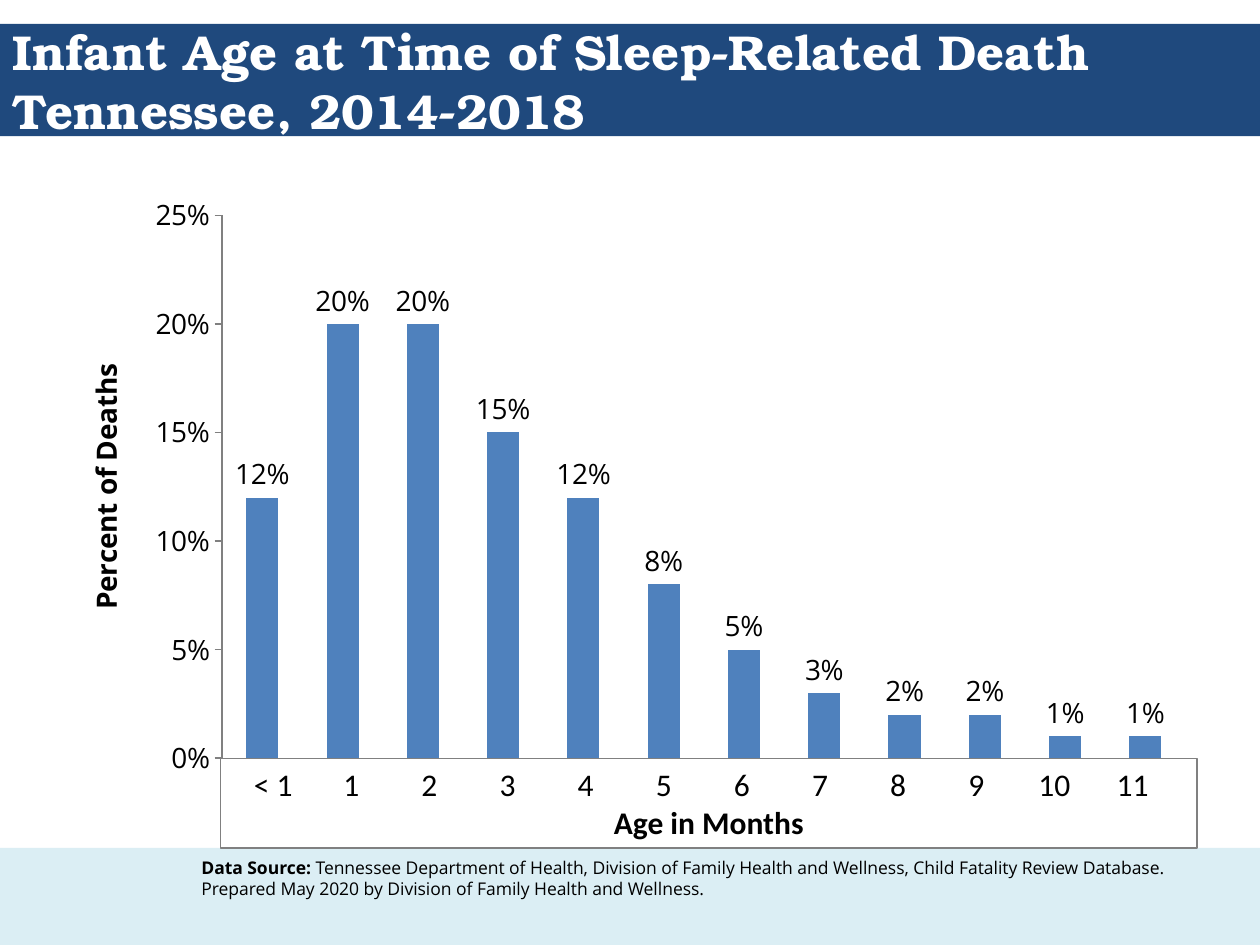
from lxml.etree import SubElement
from pptx import Presentation
from pptx.chart.data import CategoryChartData
from pptx.dml.color import RGBColor
from pptx.enum.chart import XL_CHART_TYPE as ChartType
from pptx.enum.chart import XL_LABEL_POSITION as LabelPosition
from pptx.enum.chart import XL_TICK_MARK as TickMark
from pptx.enum.shapes import MSO_SHAPE as Shape
from pptx.enum.text import MSO_ANCHOR as Anchor
from pptx.enum.text import PP_ALIGN as Align
from pptx.oxml.ns import qn
from pptx.util import Inches, Pt

# Content
TITLE = ["Infant Age at Time of Sleep-Related Death", "Tennessee, 2014-2018"]
MONTHS = ["< 1"] + [str(month) for month in range(1, 12)]
SHARES = [0.12, 0.2, 0.2, 0.15, 0.12, 0.08, 0.05, 0.03, 0.02, 0.02, 0.01, 0.01]
VALUE_TITLE = "Percent of Deaths"
MONTH_TITLE = "Age in Months"
SOURCE = [
    ("Data Source: ", True),
    ("Tennessee Department of Health, Division of Family Health and Wellness, "
     "Child Fatality Review Database. Prepared May 2020 by Division of Family "
     "Health and Wellness.", False),
]

THEME = {
    "navy": "1F497D", "pale": "DBEEF4", "bar": "4F81BD", "gray": "808080",
    "white": "FFFFFF", "black": "000000",
    "title": ("TeX Gyre Bonum", 28), "chart": ("Open Sans", 16),
    "axis": ("Calibri", 18), "source": ("Open Sans", 10),
}
PLOT = {"x": 0.134, "y": 0.061, "w": 0.866, "h": 0.907}
FIRST_MONTH, MONTH_STEP = 0.32, 0.62  # centres, from the text's left edge


def color(name):
    return RGBColor.from_string(THEME[name])


def style(font, role, bold=False, ink="black"):
    font.name, size = THEME[role]
    font.size = Pt(size)
    font.bold = bold
    font.color.rgb = color(ink)


def add_run(paragraph, text, role, bold=False, ink="black"):
    run = paragraph.add_run()
    run.text = text
    style(run.font, role, bold, ink)


def add_box(slide, place, fill=None, line=None):
    shape = slide.shapes.add_shape(Shape.RECTANGLE, *map(Inches, place))
    shape.shadow.inherit = False
    if fill:
        shape.fill.solid()
        shape.fill.fore_color.rgb = color(fill)
    else:
        shape.fill.background()
    if line:
        shape.line.color.rgb = color(line)
        shape.line.width = Pt(0.75)
    else:
        shape.line.fill.background()
    return shape


def add_title(slide):
    title = slide.shapes.title
    title.left, title.top, title.width, title.height = map(Inches, (0, 0.19, 10, 0.9))
    frame = title.text_frame
    frame.word_wrap = True
    frame.vertical_anchor = Anchor.MIDDLE
    paragraph = frame.paragraphs[0]
    paragraph.alignment = Align.LEFT
    for index, line in enumerate(TITLE):
        if index:
            paragraph.add_line_break()
        add_run(paragraph, line, "title", True, "white")


def add_source(slide):
    box = slide.shapes.add_textbox(*map(Inches, (1.5, 6.75, 8.33, 0.74)))
    box.text_frame.word_wrap = True
    for text, bold in SOURCE:
        add_run(box.text_frame.paragraphs[0], text, "source", bold)


def set_plot_layout(chart):
    plot_area = chart.plots[0]._element.getparent()
    for old in plot_area.findall(qn("c:layout")):
        plot_area.remove(old)
    layout = SubElement(plot_area, qn("c:layout"))
    plot_area.insert(0, layout)
    manual = SubElement(layout, qn("c:manualLayout"))
    settings = {"layoutTarget": "inner", "xMode": "edge", "yMode": "edge", **PLOT}
    for tag, value in settings.items():
        SubElement(manual, qn("c:" + tag)).set("val", str(value))


def add_death_chart(slide):
    data = CategoryChartData(number_format="0%")
    data.categories = [str(number) for number in range(1, len(SHARES) + 1)]
    data.add_series("Series 1", SHARES)
    chart = slide.shapes.add_chart(
        ChartType.COLUMN_CLUSTERED, *map(Inches, (0.58, 1.42, 8.83, 4.75)), data).chart
    style(chart.font, "chart")
    chart.has_legend = False
    chart.has_title = False
    set_plot_layout(chart)

    # Bars and their labels
    plot = chart.plots[0]
    plot.gap_width = 150
    plot.vary_by_categories = False
    fill = plot.series[0].format.fill
    fill.solid()
    fill.fore_color.rgb = color("bar")
    plot.has_data_labels = True
    labels = plot.data_labels
    labels.show_value = True
    labels.number_format = "0%"
    labels.number_format_is_linked = False
    labels.position = LabelPosition.OUTSIDE_END
    style(labels.font, "chart")

    # Axes
    chart.category_axis.visible = False
    axis = chart.value_axis
    axis.minimum_scale, axis.maximum_scale, axis.major_unit = 0, 0.25, 0.05
    axis.has_major_gridlines = False
    axis.major_tick_mark = TickMark.OUTSIDE
    axis.tick_labels.number_format = "0%"
    axis.tick_labels.number_format_is_linked = False
    axis.format.line.color.rgb = color("gray")
    style(axis.tick_labels.font, "chart")
    add_run(axis.axis_title.text_frame.paragraphs[0], VALUE_TITLE, "chart", True)


def add_month_box(slide):
    frame = add_box(slide, (1.75, 6.02, 7.75, 0.71), line="gray").text_frame
    frame.word_wrap = True
    frame.vertical_anchor = Anchor.TOP
    months = frame.paragraphs[0]
    months.alignment = Align.LEFT
    tabs = SubElement(months._p.get_or_add_pPr(), qn("a:tabLst"))
    for index in range(len(MONTHS)):
        tab = SubElement(tabs, qn("a:tab"))
        tab.set("pos", str(Inches(FIRST_MONTH + index * MONTH_STEP)))
        tab.set("algn", "ctr")
    add_run(months, "".join("\t" + month for month in MONTHS), "axis")
    caption = frame.add_paragraph()
    caption.alignment = Align.CENTER
    add_run(caption, MONTH_TITLE, "axis", True)


def main():
    presentation = Presentation()
    presentation.slide_width, presentation.slide_height = Inches(10), Inches(7.5)
    slide = presentation.slides.add_slide(presentation.slide_layouts[5])
    # Title band and footer band, then the text and chart over them
    add_box(slide, (0, 0.19, 10, 0.89), fill="navy")
    add_box(slide, (0, 6.73, 10, 0.77), fill="pale")
    # The title placeholder comes first, so lift it above the bands
    slide.shapes._spTree.append(slide.shapes.title._element)
    add_title(slide)
    add_source(slide)
    add_death_chart(slide)
    add_month_box(slide)
    presentation.save("out.pptx")


if __name__ == "__main__":
    main()
